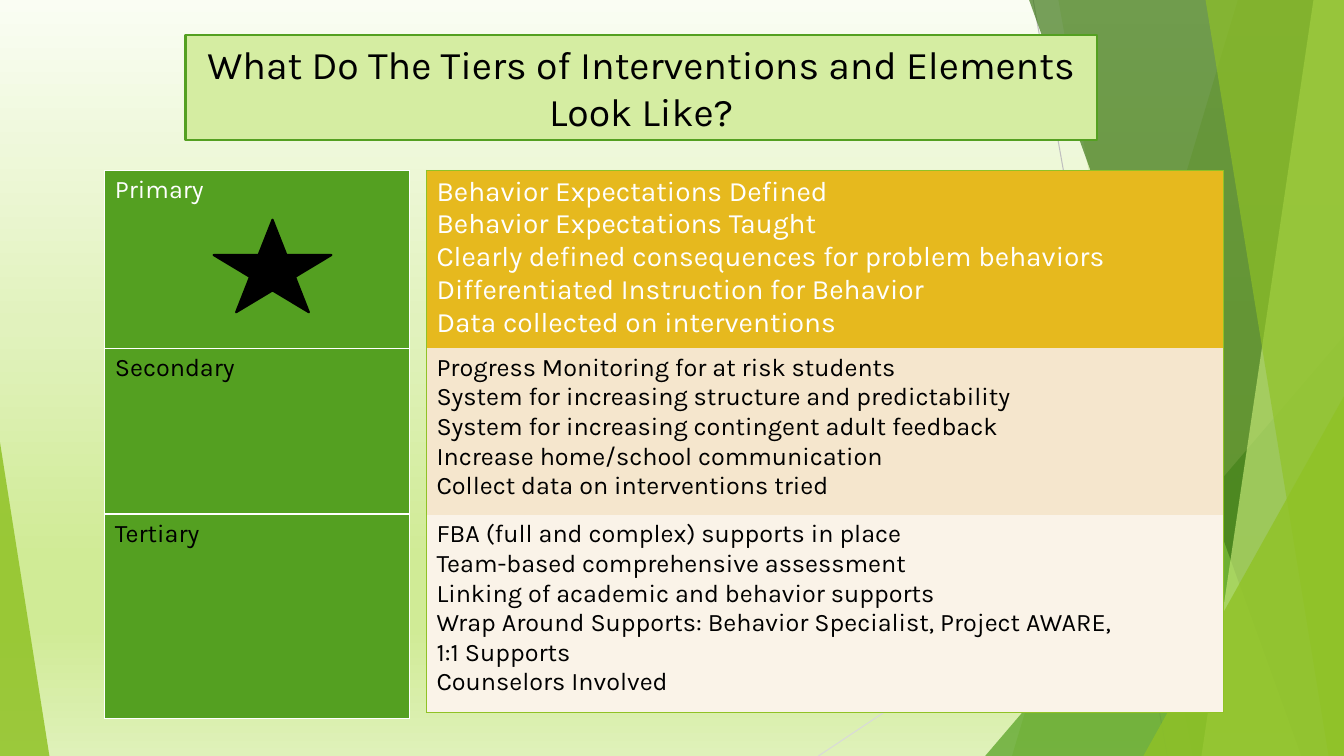
import dataclasses

import lxml.etree
import pptx
import pptx.dml.color
import pptx.enum.dml
import pptx.enum.shapes
import pptx.enum.text
import pptx.oxml.ns
import pptx.util

Pt = pptx.util.Pt
qn = pptx.oxml.ns.qn
SHAPES = pptx.enum.shapes.MSO_SHAPE


@dataclasses.dataclass(frozen=True)
class Theme:
    """Colours, font and type sizes of the deck."""
    font: str = "Karla"
    title_size: int = 28
    lead_size: int = 20
    body_size: int = 18
    black: str = "000000"
    white: str = "FFFFFF"
    lime: str = "90C226"
    green: str = "54A021"
    forest: str = "3F7819"
    pale_lime: str = "C0E474"
    title_fill: str = "D5EDA2"
    gold: str = "E6B91E"
    sand: str = "F5E6CD"
    cream: str = "FAF3E8"
    rays: tuple = ("BFBFBF", "D9D9D9")
    sky: tuple = ((0, "FAFDF3"), (43, "E1F2BD"), (74, "D0EB96"),
                  (83, "D0EB96"), (100, "DFF1B9"))


@dataclasses.dataclass(frozen=True)
class Box:
    """A rectangle in points."""
    left: float
    top: float
    width: float
    height: float

    def lengths(self):
        """Return the four values as lengths."""
        return [Pt(value) for value in (self.left, self.top, self.width, self.height)]


THEME = Theme()
TIERS = (
    ("Primary", THEME.white, THEME.gold, THEME.lead_size, (
        "Behavior Expectations Defined",
        "Behavior Expectations Taught",
        "Clearly defined consequences for problem behaviors",
        "Differentiated Instruction for Behavior",
        "Data collected on interventions")),
    ("Secondary", THEME.black, THEME.sand, THEME.body_size, (
        "Progress Monitoring for at risk students",
        "System for increasing structure and predictability",
        "System for increasing contingent adult feedback",
        "Increase home/school communication",
        "Collect data on interventions tried")),
    ("Tertiary", THEME.black, THEME.cream, THEME.body_size, (
        "FBA (full and complex) supports in place",
        "Team-based comprehensive assessment",
        "Linking of academic and behavior supports",
        "Wrap Around Supports: Behavior Specialist, Project AWARE,",
        "1:1 Supports",
        "Counselors Involved")),
)


def colour(code):
    """Return the colour for a hex code."""
    return pptx.dml.color.RGBColor.from_string(code)


def paint(shape, fill, line=None, opacity=100):
    """Give a shape a flat fill, an optional outline and no shadow."""
    shape.shadow.inherit = False
    shape.fill.solid()
    shape.fill.fore_color.rgb = colour(fill)
    if opacity < 100:
        tint = shape.element.spPr.find(".//" + qn("a:srgbClr"))
        lxml.etree.SubElement(tint, qn("a:alpha"), val=str(opacity * 1000))
    if line:
        shape.line.color.rgb = colour(line)
        shape.line.width = Pt(1.5)
    else:
        shape.line.fill.background()


def write(frame, lines, size, code):
    """Write each line as a paragraph of one run."""
    for index, text in enumerate(lines):
        para = frame.add_paragraph() if index else frame.paragraphs[0]
        span = para.add_run()
        span.text = text
        span.font.name = THEME.font
        span.font.size = Pt(size)
        span.font.color.rgb = colour(code)


def draw_sky(page):
    """Fill the page background with a vertical gradient."""
    fill = page.background.fill
    fill.gradient()
    fill.gradient_angle = 270
    stops = page.element.find(".//" + qn("a:gsLst"))
    for stop in list(stops):
        stops.remove(stop)
    for position, code in THEME.sky:
        stop = lxml.etree.SubElement(stops, qn("a:gs"), pos=str(position * 1000))
        lxml.etree.SubElement(stop, qn("a:srgbClr"), val=code)


def draw_ray(page, start, end, code):
    """Draw one thin line of the backdrop."""
    ray = page.shapes.add_connector(
        pptx.enum.shapes.MSO_CONNECTOR.STRAIGHT, *(Pt(value) for value in start + end))
    ray.line.color.rgb = colour(code)
    ray.line.width = Pt(0.75)
    lxml.etree.SubElement(ray.element.spPr, qn("a:effectLst"))


def draw_band(page, box, top_left, bottom_left, fill, opacity):
    """Draw a slanted band reaching the right edge of the box."""
    right, bottom = box.left + box.width, box.top + box.height
    builder = page.shapes.build_freeform(Pt(top_left), Pt(box.top), scale=1.0)
    corners = ((right, box.top), (right, bottom), (bottom_left, bottom))
    builder.add_line_segments([(Pt(x), Pt(y)) for x, y in corners], close=True)
    paint(builder.convert_to_shape(), fill, opacity=opacity)


def draw_wedge(page, box, width, height, apex, fill, opacity):
    """Draw a right triangle in the bottom left (apex 0) or right (apex 1) corner."""
    place = Box(box.left + apex * (box.width - width),
                box.top + box.height - height, width, height)
    wedge = page.shapes.add_shape(SHAPES.ISOSCELES_TRIANGLE, *place.lengths())
    wedge.adjustments[0] = apex
    paint(wedge, fill, opacity=opacity)


def draw_backdrop(page, box):
    """Draw the gradient, the rays and the translucent facets."""
    draw_sky(page)
    right, bottom = box.left + box.width, box.top + box.height
    draw_ray(page, (738, box.top), (833.8, bottom), THEME.rays[0])
    draw_ray(page, (right, 290.2), (584.6, bottom), THEME.rays[1])
    draw_band(page, box, 884.2, 722.9, THEME.lime, 30)
    draw_band(page, box, 756, 851.8, THEME.lime, 20)
    draw_wedge(page, box, 256.3, 300, 1, THEME.green, 72)
    draw_band(page, box, 735.1, 929.5, THEME.forest, 70)
    draw_band(page, box, 938.2, 858.2, THEME.pale_lime, 70)
    draw_band(page, box, 861.1, 949, THEME.lime, 65)
    draw_wedge(page, box, 143.3, 257, 1, THEME.lime, 80)
    draw_wedge(page, box, 35.3, 224, 0, THEME.lime, 85)


def draw_title(page, box, text):
    """Format the title placeholder and bring it in front of the backdrop."""
    title = page.shapes.title
    title.element.getparent().append(title.element)
    title.left, title.top, title.width, title.height = box.lengths()
    paint(title, THEME.title_fill, THEME.green)
    frame = title.text_frame
    frame.auto_size = pptx.enum.text.MSO_AUTO_SIZE.NONE
    frame.vertical_anchor = pptx.enum.text.MSO_ANCHOR.MIDDLE
    write(frame, [text], THEME.title_size, THEME.black)
    frame.paragraphs[0].alignment = pptx.enum.text.PP_ALIGN.CENTER


def set_borders(cell, widths, code):
    """Set left, right, top and bottom borders; a width of 0 hides one."""
    properties = cell._tc.get_or_add_tcPr()
    for index, (side, width) in enumerate(zip("LRTB", widths)):
        line = lxml.etree.Element(qn("a:ln" + side), w=str(int(Pt(width))))
        if width:
            fill = lxml.etree.SubElement(line, qn("a:solidFill"))
            lxml.etree.SubElement(fill, qn("a:srgbClr"), val=code)
        else:
            lxml.etree.SubElement(line, qn("a:noFill"))
        properties.insert(index, line)


def draw_column(page, box, heights, entries, border, inner):
    """Draw a one-column table from (lines, size, text colour, fill) entries."""
    table = page.shapes.add_table(len(entries), 1, *box.lengths()).table
    table.first_row = table.horz_banding = False
    last = len(entries) - 1
    for index, (lines, size, code, fill) in enumerate(entries):
        table.rows[index].height = Pt(heights[index])
        cell = table.cell(index, 0)
        cell.fill.solid()
        cell.fill.fore_color.rgb = colour(fill)
        write(cell.text_frame, lines, size, code)
        set_borders(cell, (1, 1, inner if index else 1, inner if index < last else 1), border)


def draw_tiers(page, box):
    """Draw the tier names, their elements and the star on the first tier."""
    elements = [(lines, size, code, fill) for _, code, fill, size, lines in TIERS]
    names = [([name], THEME.body_size, code, THEME.green) for name, code, *_ in TIERS]
    offset = 229.7
    right_box = Box(box.left + offset, box.top, box.width - offset, 387)
    draw_column(page, right_box, (127, 119, 141), elements, THEME.lime, 0)
    left_box = Box(box.left, box.top, 217.4, box.height)
    draw_column(page, left_box, (127.4, 118.1, 146.2), names, THEME.white, 1)
    star_box = Box(box.left + 77.7, box.top + 35.2, 84.2, 66.2)
    star = page.shapes.add_shape(SHAPES.STAR_5_POINT, *star_box.lengths())
    paint(star, THEME.black, THEME.black)


def main():
    """Build the deck and save it."""
    deck = pptx.Presentation()
    deck.slide_width, deck.slide_height = Pt(960), Pt(540)
    page = deck.slides.add_slide(deck.slide_layouts[5])
    draw_backdrop(page, Box(0, 0, 960, 540))
    draw_title(page, Box(132.5, 25.2, 650.9, 74.9),
               "What Do The Tiers of Interventions and Elements Look Like?")
    draw_tiers(page, Box(74.9, 121.7, 799.2, 391.7))
    deck.save("out.pptx")


if __name__ == "__main__":
    main()
